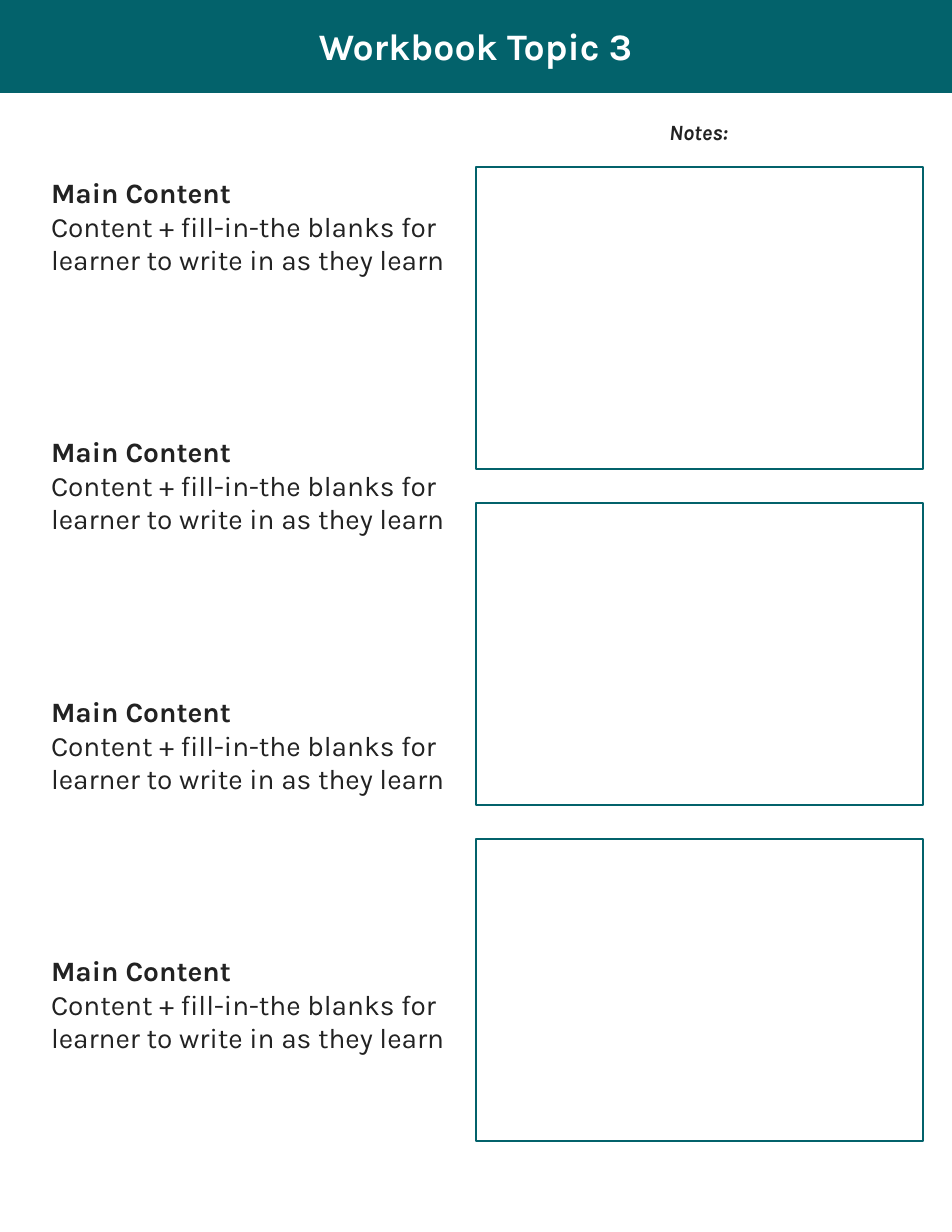
"""Build a workbook page with a title banner, four content blocks and three note boxes."""
from pptx import Presentation
from pptx import util as u
from pptx.dml.color import RGBColor
from pptx.enum import shapes, text

COLORS = {"teal": "03626B", "white": "FFFFFF", "ink": "222222"}
FONT = "Karla"
EMU_PER_PX = 914400 / 112


def place(*lengths):
    return [u.Emu(round(length * EMU_PER_PX)) for length in lengths]


def style(paragraph, size, color, bold=False, italic=False):
    for run in paragraph.runs:
        run.font.name = FONT
        run.font.size = u.Pt(size)
        run.font.bold = bold
        run.font.italic = italic
        run.font.color.rgb = RGBColor.from_string(COLORS[color])


presentation = Presentation()
presentation.slide_width, presentation.slide_height = place(952, 1232)
slide = presentation.slides.add_slide(presentation.slide_layouts[5])

title = slide.shapes.title
title.left, title.top, title.width, title.height = place(158, 18, 635, 56)
title.text_frame.text = "Workbook Topic 3"
title.text_frame.vertical_anchor = text.MSO_ANCHOR.MIDDLE
title.text_frame.paragraphs[0].alignment = text.PP_ALIGN.CENTER
style(title.text_frame.paragraphs[0], 24, "white", bold=True)

rectangles = [(0, 0, 952, 92, "teal")]
rectangles += [(476, 167 + 336 * row, 447, 302, "white") for row in range(3)]
for left, top, width, height, fill in rectangles:
    rectangle = slide.shapes.add_shape(
        shapes.MSO_SHAPE.RECTANGLE, *place(left, top, width, height))
    rectangle.shadow.inherit = False
    rectangle.fill.solid()
    rectangle.fill.fore_color.rgb = RGBColor.from_string(COLORS[fill])
    rectangle.line.color.rgb = RGBColor.from_string(COLORS["teal"])
    rectangle.line.width = u.Pt(1)
    title.element.addprevious(rectangle.element)

notes = slide.shapes.add_textbox(*place(658, 113, 83, 38))
notes.text_frame.word_wrap = False
notes.text_frame.text = "Notes:"
style(notes.text_frame.paragraphs[0], 14, "ink", bold=True, italic=True)

for top in (170, 429, 689, 948):
    content = slide.shapes.add_textbox(*place(40, top, 417, 113))
    content.text_frame.word_wrap = True
    content.text_frame.text = (
        "Main Content\nContent + fill-in-the blanks for learner to write in as they learn")
    heading, body = content.text_frame.paragraphs
    style(heading, 18, "ink", bold=True)
    style(body, 18, "ink")

presentation.save("out.pptx")
